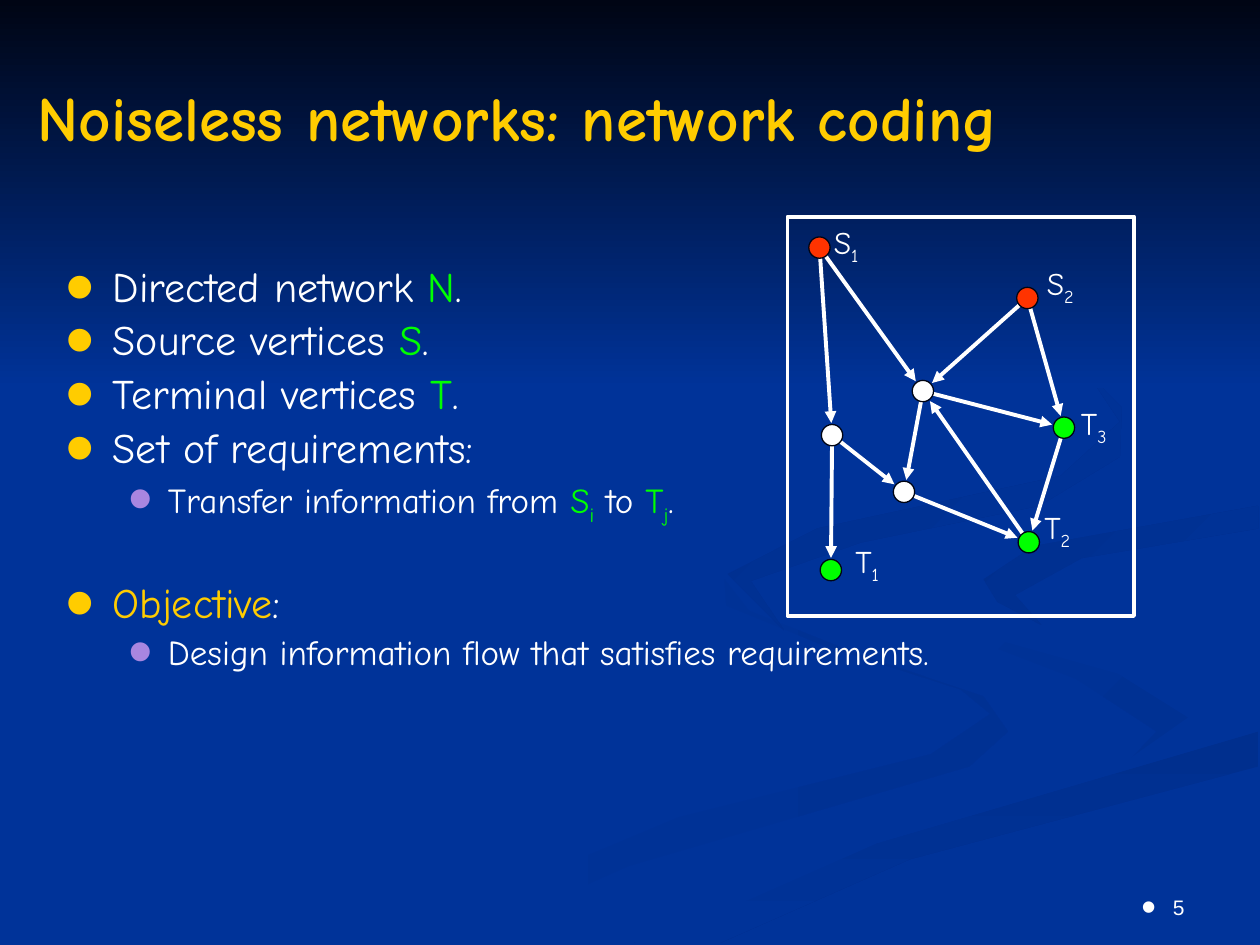
import math

from lxml import etree
from pptx import Presentation
from pptx.dml.color import RGBColor
from pptx.enum import shapes, text
from pptx.oxml import ns
from pptx.util import Pt

BLUE = RGBColor(0x00, 0x33, 0x99)
NIGHT = RGBColor(0x00, 0x05, 0x14)
SHADE = RGBColor(0x00, 0x2F, 0x8E)
EDGE_SHADE = RGBColor(0x00, 0x31, 0x93)
GOLD = RGBColor(0xFF, 0xCC, 0x00)
LILAC = RGBColor(0xA8, 0x86, 0xE0)
WHITE = RGBColor(0xFF, 0xFF, 0xFF)
GREEN = RGBColor(0x00, 0xFF, 0x00)
RED = RGBColor(0xFF, 0x33, 0x00)
FONT = "Comic Neue"
NODE_SIZE = 12.2
HEAD_GAP = 7  # from an arrow's tip to the centre of its vertex

# Background ribbons: first colour, last colour, gradient angle, outline
RIBBONS = [
    (BLUE, EDGE_SHADE, 0, [
        (562, 398), (491, 374), (428, 349), (414, 331), (415, 346), (471, 369), (549, 394),
        (566, 408), (532, 431), (388, 467), (216, 539), (260, 539), (359, 495), (554, 438),
        (576, 418)]),
    (BLUE, EDGE_SHADE, 45, [
        (679, 410), (639, 385), (557, 362), (521, 334), (532, 356), (615, 388), (661, 418),
        (644, 436), (675, 422)]),
    (SHADE, BLUE, 90, [
        (362, 539), (411, 539), (520, 491), (719, 438), (719, 418), (501, 482)]),
    (BLUE, BLUE, 0, [
        (522, 334), (557, 362), (639, 385), (679, 410), (642, 436), (507, 472), (343, 539),
        (374, 538), (501, 482), (719, 418), (719, 387), (588, 354), (563, 335), (592, 312),
        (719, 289), (719, 279), (554, 307)]),
    (SHADE, BLUE, 45, [
        (562, 331), (570, 344), (595, 357), (580, 340), (618, 319), (719, 302), (719, 289),
        (591, 312)]),
    (SHADE, BLUE, 45, [
        (492, 310), (594, 289), (640, 261), (641, 233), (607, 198), (549, 168), (616, 205),
        (640, 241), (606, 272), (467, 302), (416, 328), (448, 360), (429, 332)]),
    # Dark sky over the upper part
    (NIGHT, BLUE, 90, [(0, 0), (0, 222), (720, 222), (720, 0)]),
]

# Bullets: level, space before, runs of (text, colour, is subscript)
BULLETS = [
    (0, 4.8, [("Directed network ", WHITE, False), ("N", GREEN, False), (".", WHITE, False)]),
    (0, 4.8, [("Source vertices ", WHITE, False), ("S", GREEN, False), (".", WHITE, False)]),
    (0, 4.8, [("Terminal vertices ", WHITE, False), ("T", GREEN, False), (".", WHITE, False)]),
    (0, 4.8, [("Set of requirements:", WHITE, False)]),
    (1, 4, [("Transfer information from ", WHITE, False), ("S", GREEN, False),
            ("i", GREEN, True), (" to ", WHITE, False), ("T", GREEN, False),
            ("j", GREEN, True), (".", WHITE, False)]),
    (0, 34.4, [("Objective", GOLD, False), (":", WHITE, False)]),
    (1, 4, [("Design information flow that satisfies requirements.", WHITE, False)]),
]
# By level: text size, bullet colour, left margin, hanging indent
LEVELS = [(24, GOLD, 27, 27), (20, LILAC, 58.5, 22.5)]

# Vertex centres and colours
VERTICES = {
    "S1": (468.3, 141.5, RED), "S2": (587.1, 170.3, RED),
    "T1": (474.8, 325.8, GREEN), "T2": (587.9, 309.9, GREEN), "T3": (608, 244.4, GREEN),
    "left": (475.5, 248.7, WHITE), "low": (516.6, 281.1, WHITE), "hub": (527.4, 223.5, WHITE),
}
# Top left corners of the vertex labels
LABELS = {"S1": (469.4, 123.8), "S2": (591.1, 147.6), "T1": (481.7, 306),
          "T2": (589.7, 286.6), "T3": (610.6, 227.5)}
EDGES = [("S1", "left"), ("S1", "hub"), ("S2", "hub"), ("S2", "T3"), ("T3", "T2"),
         ("hub", "T3"), ("hub", "low"), ("left", "low"), ("left", "T1"), ("low", "T2"),
         ("T2", "hub")]


def place(shape, left, top, width, height):
    shape.left, shape.top, shape.width, shape.height = map(Pt, (left, top, width, height))


def add_run(para, words, size, color, subscript=False, font=FONT, bold=False):
    span = para.add_run()
    span.text = words
    span.font.name, span.font.size, span.font.bold = font, Pt(size), bold
    span.font.color.rgb = color
    if subscript:
        span.font._element.set("baseline", "-25000")


def add_bullet(para, color, margin, hanging):
    props = para._p.get_or_add_pPr()
    props.set("marL", str(Pt(margin)))
    props.set("indent", str(-Pt(hanging)))
    tint = etree.SubElement(props, ns.qn("a:buClr"))
    etree.SubElement(tint, ns.qn("a:srgbClr"), val=str(color))
    etree.SubElement(props, ns.qn("a:buSzPct"), val="200000")
    etree.SubElement(props, ns.qn("a:buFont"), typeface="Arial")
    etree.SubElement(props, ns.qn("a:buChar"), char="•")


def add_ribbon(page, first, last, angle, points):
    builder = page.shapes.build_freeform(*points[0], scale=Pt(1))
    builder.add_line_segments(points[1:], close=True)
    ribbon = builder.convert_to_shape()
    ribbon.shadow.inherit = False
    ribbon.line.fill.background()
    if first == last:
        ribbon.fill.solid()
        ribbon.fill.fore_color.rgb = first
        return
    ribbon.fill.gradient()
    ribbon.fill.gradient_angle = 360 - angle
    for stop, color in zip(ribbon.fill.gradient_stops, (first, last)):
        stop.color.rgb = color


def add_outlined(page, kind, bounds, fill, line, width):
    shape = page.shapes.add_shape(kind, *map(Pt, bounds))
    shape.shadow.inherit = False
    if fill is None:
        shape.fill.background()
    else:
        shape.fill.solid()
        shape.fill.fore_color.rgb = fill
    shape.line.color.rgb, shape.line.width = line, Pt(width)


def add_edge(page, start, end):
    (x1, y1, _), (x2, y2, _) = VERTICES[start], VERTICES[end]
    share = 1 - HEAD_GAP / math.hypot(x2 - x1, y2 - y1)
    tip = (x1 + (x2 - x1) * share, y1 + (y2 - y1) * share)
    edge = page.shapes.add_connector(
        shapes.MSO_CONNECTOR.STRAIGHT, *map(Pt, (x1, y1, *tip)))
    edge.line.color.rgb, edge.line.width = WHITE, Pt(2.25)
    etree.SubElement(edge.line._get_or_add_ln(), ns.qn("a:tailEnd"), type="triangle")
    etree.SubElement(edge._element.spPr, ns.qn("a:effectLst"))


def add_vertex(page, x, y, color):
    bounds = (x - NODE_SIZE / 2, y - NODE_SIZE / 2, NODE_SIZE, NODE_SIZE)
    add_outlined(page, shapes.MSO_SHAPE.OVAL, bounds, color, NIGHT, 0.75)


def add_label(page, name, left, top):
    box = page.shapes.add_textbox(*map(Pt, (left, top, 33.5, 28.8)))
    box.text_frame.word_wrap = False
    box.text_frame.auto_size = text.MSO_AUTO_SIZE.SHAPE_TO_FIT_TEXT
    para = box.text_frame.paragraphs[0]
    letter, index = name
    add_run(para, letter, 18, WHITE)
    add_run(para, index, 18, WHITE, subscript=True)


def fill_title(title):
    place(title, 14.4, 21.6, 700.5, 90)
    frame = title.text_frame
    frame.auto_size = text.MSO_AUTO_SIZE.NONE
    frame.vertical_anchor = text.MSO_ANCHOR.MIDDLE
    para = frame.paragraphs[0]
    para.alignment = text.PP_ALIGN.LEFT
    add_run(para, "Noiseless networks: network coding", 36, GOLD, bold=True)


def fill_body(body):
    place(body, 30.25, 148.3, 669.6, 379.5)
    frame = body.text_frame
    frame.auto_size = text.MSO_AUTO_SIZE.NONE
    for number, (level, before, runs) in enumerate(BULLETS):
        para = frame.add_paragraph() if number else frame.paragraphs[0]
        size, color, margin, hanging = LEVELS[level]
        para.level, para.line_spacing, para.space_before = level, 0.9, Pt(before)
        add_bullet(para, color, margin, hanging)
        for words, tint, subscript in runs:
            add_run(para, words, size, tint, subscript)


def add_page_number(page):
    box = page.shapes.add_textbox(*map(Pt, (516.25, 491.75, 167.75, 37.5)))
    box.text_frame.word_wrap = True
    box.text_frame.vertical_anchor = text.MSO_ANCHOR.BOTTOM
    para = box.text_frame.paragraphs[0]
    para.alignment = text.PP_ALIGN.RIGHT
    add_bullet(para, WHITE, 18, 18)
    add_run(para, "5", 12, WHITE, font="Arial")


def main():
    deck = Presentation()
    deck.slide_width, deck.slide_height = Pt(720), Pt(540)
    page = deck.slides.add_slide(deck.slide_layouts[1])
    title, body = page.placeholders
    # Background, kept behind the placeholders
    page.background.fill.solid()
    page.background.fill.fore_color.rgb = BLUE
    for ribbon in RIBBONS:
        add_ribbon(page, *ribbon)
    for holder in (body, title):
        holder.element.getparent().append(holder.element)
    # Text
    fill_title(title)
    fill_body(body)
    add_page_number(page)
    # Network diagram
    add_outlined(page, shapes.MSO_SHAPE.RECTANGLE, (450, 123.8, 198, 228.2), None, WHITE, 2.25)
    for edge in EDGES:
        add_edge(page, *edge)
    for vertex in VERTICES.values():
        add_vertex(page, *vertex)
    for name, corner in LABELS.items():
        add_label(page, name, *corner)
    deck.save("out.pptx")


if __name__ == "__main__":
    main()
